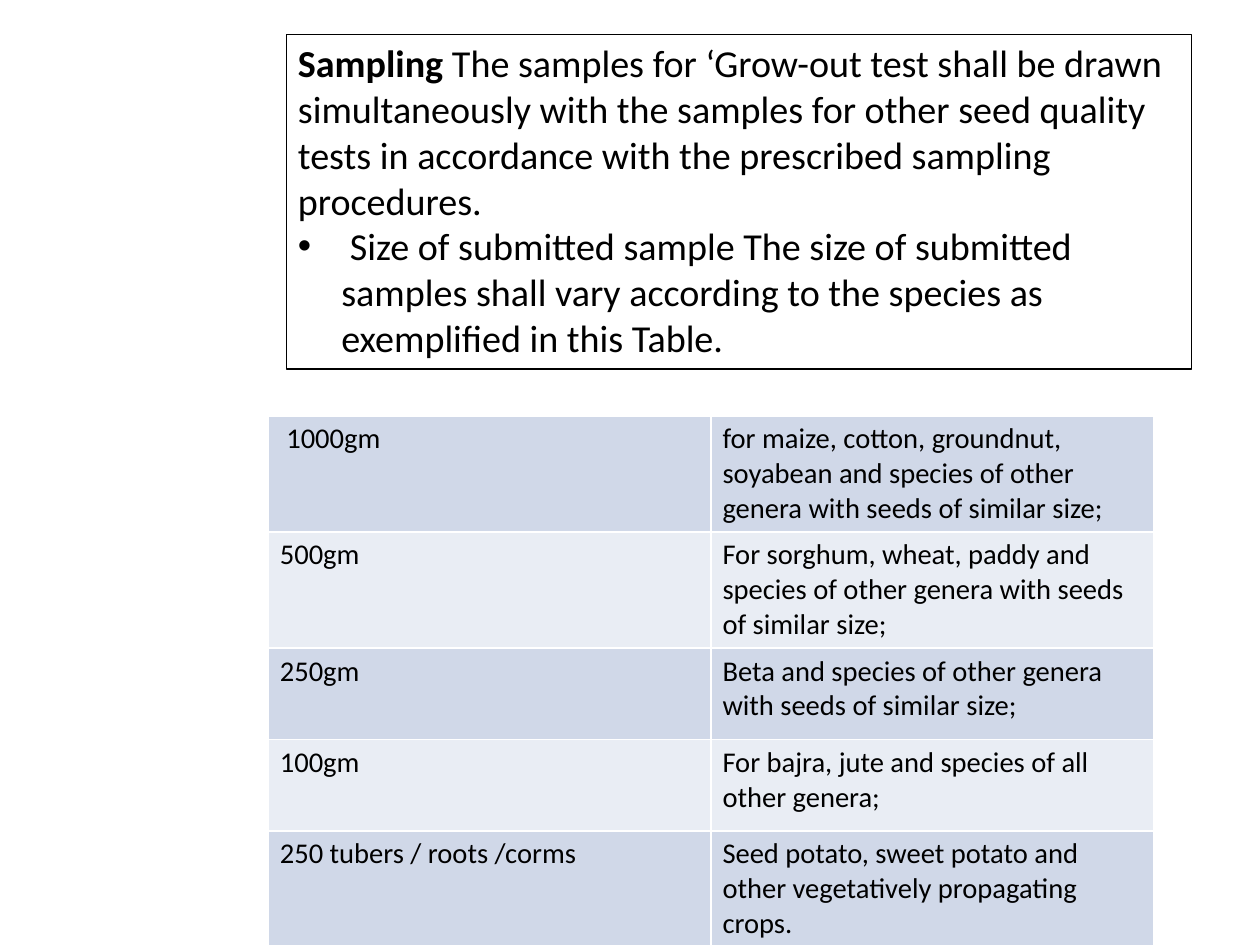
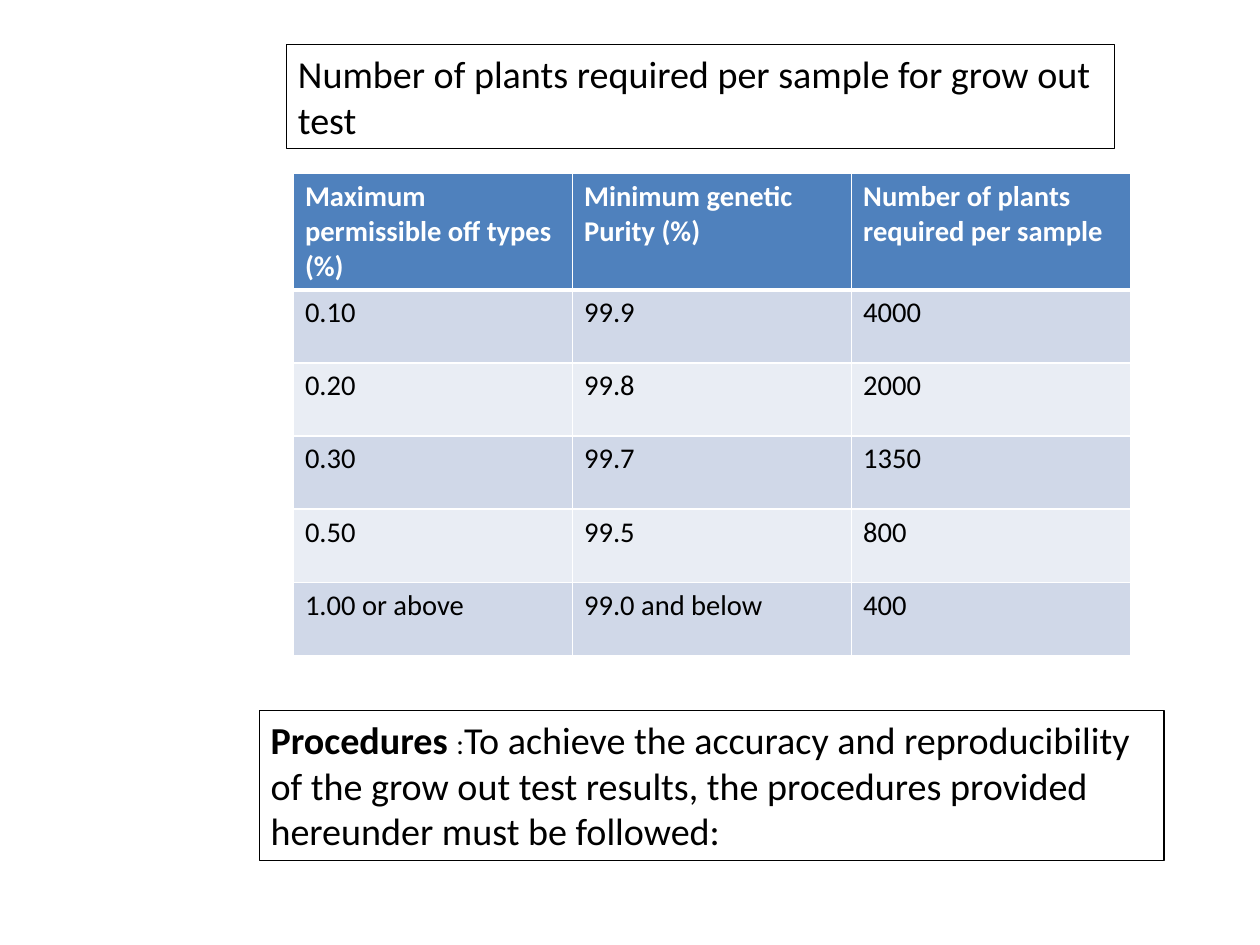
from lxml.etree import SubElement
from pptx import Presentation
from pptx.dml.color import RGBColor
from pptx.enum.shapes import MSO_SHAPE
from pptx.enum.text import MSO_ANCHOR, PP_ALIGN
from pptx.oxml.ns import qn
from pptx.util import Inches, Pt

FONT = "Calibri"
BLACK = RGBColor(0x00, 0x00, 0x00)
WHITE = RGBColor(0xFF, 0xFF, 0xFF)
BLUE = RGBColor(0x4F, 0x81, 0xBD)
BANDS = [RGBColor(0xD0, 0xD8, 0xE8), RGBColor(0xE9, 0xED, 0xF4)]


def write(para, text, size=24, bold=False, color=BLACK):
    run = para.add_run()
    run.text = text
    run.font.name = FONT
    run.font.size = Pt(size)
    run.font.bold = bold
    run.font.color.rgb = color


def edge(cell, side, width):
    line = SubElement(cell._tc.get_or_add_tcPr(), qn(f"a:ln{side}"), w=str(Pt(width)))
    fill = SubElement(line, qn("a:solidFill"))
    SubElement(fill, qn("a:srgbClr"), val=str(WHITE))


deck = Presentation()
deck.slide_width = Inches(11.03)
deck.slide_height = Inches(8.27)
blank = deck.slide_layouts[6]
pages = [deck.slides.add_slide(blank) for _ in range(2)]

boxes = [
    (0, (2.51, 0.3, 7.92, 2.93), [
        (False, [
            ("Sampling", {"bold": True}),
            (" The samples for ‘Grow-out test shall be drawn simultaneously with the samples "
             "for other seed quality tests in accordance with the prescribed sampling procedures.", {}),
        ]),
        (True, [
            (" Size of submitted sample The size of submitted samples shall vary according "
             "to the species as exemplified in this Table.", {}),
        ]),
    ]),
    (1, (2.51, 0.39, 7.25, 0.91), [
        (False, [("Number of plants required per sample for grow out test", {})]),
    ]),
    (1, (2.27, 6.22, 7.92, 1.31), [
        (False, [
            ("Procedures", {"bold": True}),
            (" ", {}),
            (":", {"size": 18}),
            ("To achieve the accuracy and reproducibility of the grow out test results, "
             "the procedures provided hereunder must be followed:", {}),
        ]),
    ]),
]

for page, area, paras in boxes:
    box = pages[page].shapes.add_shape(MSO_SHAPE.RECTANGLE, *[Inches(n) for n in area])
    box.shadow.inherit = False
    box.fill.background()
    box.line.color.rgb = BLACK
    box.line.width = Pt(0.75)
    frame = box.text_frame
    frame.word_wrap = True
    frame.vertical_anchor = MSO_ANCHOR.TOP
    for n, (bullet, runs) in enumerate(paras):
        para = frame.add_paragraph() if n else frame.paragraphs[0]
        para.alignment = PP_ALIGN.LEFT
        if bullet:
            props = para._p.get_or_add_pPr()
            props.set("marL", str(Inches(0.38)))
            props.set("indent", str(-Inches(0.38)))
            SubElement(props, qn("a:buFont"), typeface="Arial")
            SubElement(props, qn("a:buChar"), char="•")
        for text, style in runs:
            write(para, text, **style)

tables = [
    (0, (2.35, 3.64, 7.75), False, [1, 1, 0.8, 0.8, 1], [
        (" 1000gm", "for maize, cotton, groundnut, soyabean and species of other genera "
                    "with seeds of similar size;"),
        ("500gm", "For sorghum, wheat, paddy and species of other genera with seeds of similar size;"),
        ("250gm", "Beta and species of other genera with seeds of similar size;"),
        ("100gm", "For bajra, jute and species of all other genera;"),
        ("250 tubers / roots /corms", "Seed potato, sweet potato and other vegetatively propagating crops."),
    ]),
    (1, (2.57, 1.52, 7.33), True, [1] + [0.64] * 5, [
        ("Maximum permissible off types (%)", "Minimum genetic Purity (%)",
         "Number of plants required per sample"),
        ("0.10", "99.9", "4000"),
        ("0.20", "99.8", "2000"),
        ("0.30", "99.7", "1350"),
        ("0.50", "99.5", "800"),
        ("1.00 or above", "99.0 and below", "400"),
    ]),
]

for page, (left, top, width), head, highs, rows in tables:
    count = len(rows[0])
    grid = pages[page].shapes.add_table(
        len(rows), count, Inches(left), Inches(top), Inches(width), Inches(sum(highs))).table
    grid.first_row = head
    for col in grid.columns:
        col.width = Inches(width / count)
    for r, texts in enumerate(rows):
        grid.rows[r].height = Inches(highs[r])
        title = head and r == 0
        for c, text in enumerate(texts):
            cell = grid.cell(r, c)
            for side in "LRTB":
                thick = (title and side == "B") or (head and r == 1 and side == "T")
                edge(cell, side, 3 if thick else 1)
            cell.fill.solid()
            cell.fill.fore_color.rgb = BLUE if title else BANDS[(r - head) % 2]
            write(cell.text_frame.paragraphs[0], text, size=18, bold=title,
                  color=WHITE if title else BLACK)

deck.save("out.pptx")
